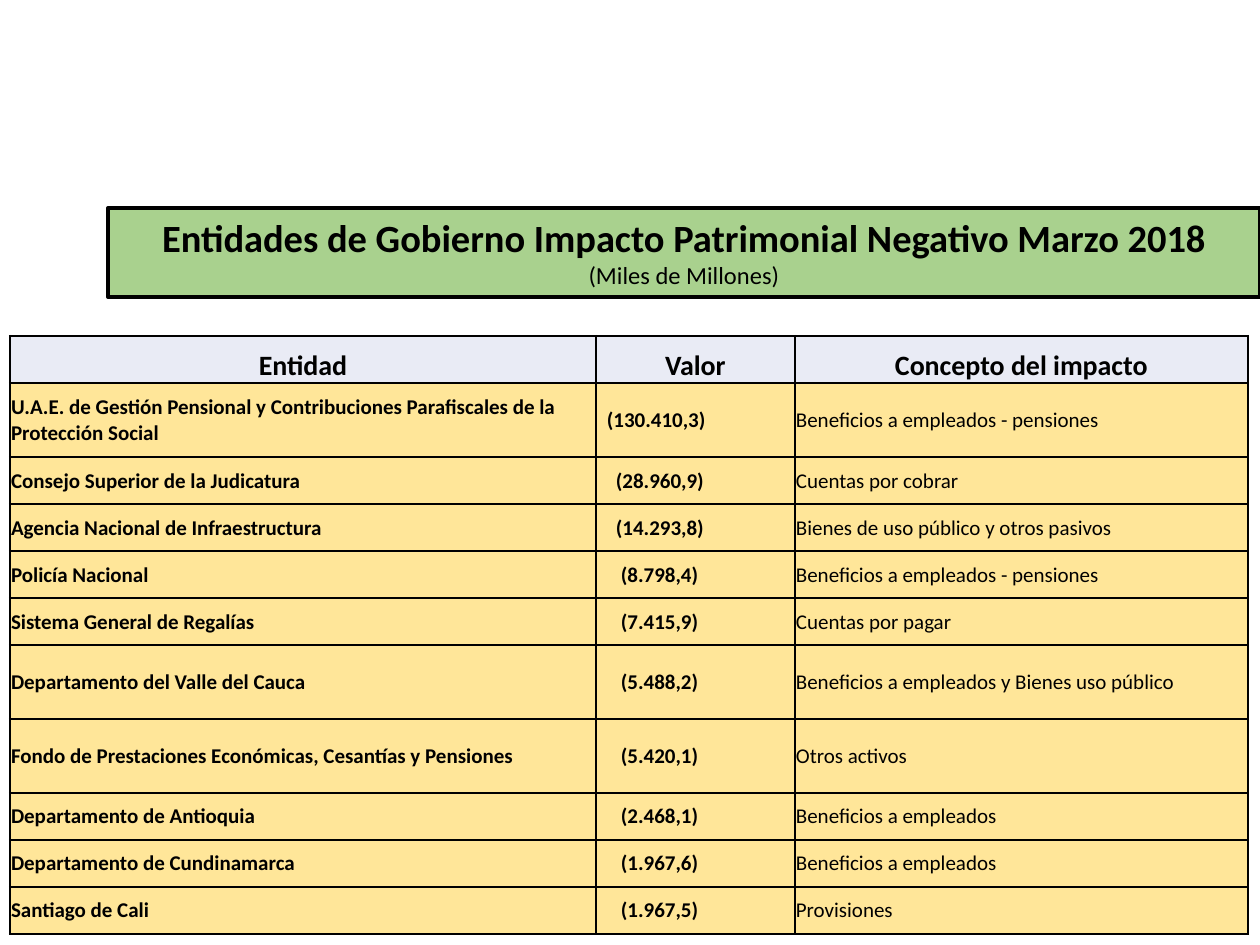
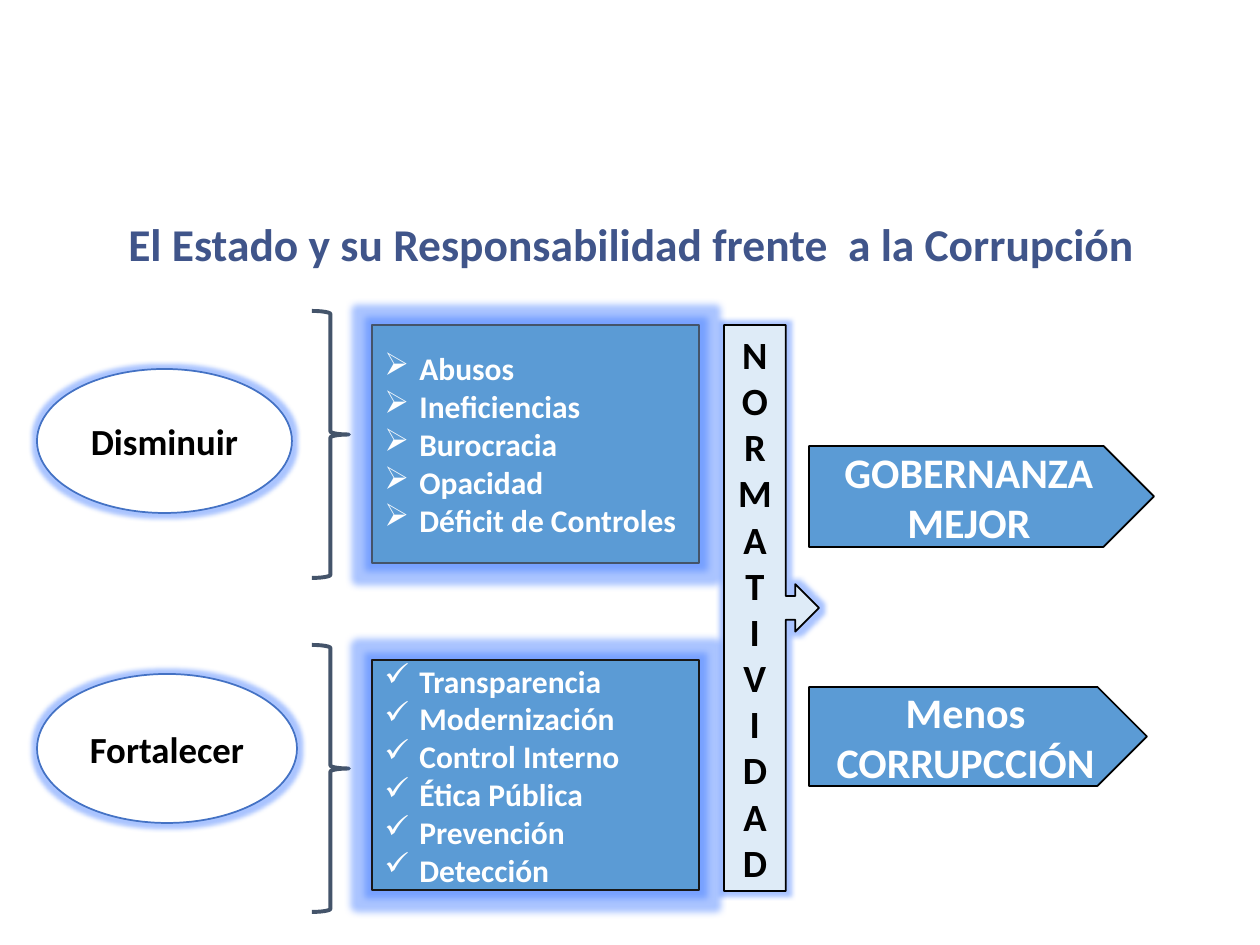
from lxml.etree import SubElement as Sub
from pptx import Presentation
from pptx.dml.color import RGBColor as Rgb
from pptx.enum.shapes import MSO_SHAPE as Kind
from pptx.enum.text import MSO_ANCHOR as Anchor, MSO_AUTO_SIZE as Auto, PP_ALIGN as Align
from pptx.oxml.ns import qn
from pptx.util import Emu, Pt

PX = Emu(7257)
BLACK = Rgb(0, 0, 0)
WHITE = Rgb(255, 255, 255)
GREEN = Rgb(0xA9, 0xD1, 0x8E)
PALE = Rgb(0xE9, 0xEB, 0xF5)
SAND = Rgb(0xFF, 0xE6, 0x99)
NAVY = Rgb(0x40, 0x55, 0x8A)
BLUE = Rgb(0x5B, 0x9B, 0xD5)
EDGE = Rgb(0x44, 0x72, 0xC4)
SLATE = Rgb(0x44, 0x54, 0x6A)
INK = Rgb(0x18, 0x17, 0x17)
ICE = Rgb(0xDE, 0xEB, 0xF7)
GLOW = Rgb(0x2B, 0x6C, 0xFF)


def write(frame, lines, sizes, color, bold=True, align=Align.CENTER, mark=None):
    for i, line in enumerate(lines):
        para = frame.paragraphs[0] if i == 0 else frame.add_paragraph()
        para.alignment = align
        if mark:
            props = para._p.get_or_add_pPr()
            props.set("marL", str(35 * PX))
            props.set("indent", str(-35 * PX))
            Sub(props, qn("a:buChar")).set("char", mark)
        run = para.add_run()
        run.text = line
        size = sizes[min(i, len(sizes) - 1)]
        form = {"name": "Calibri", "size": Pt(size), "bold": bold and not line.startswith("(Miles")}
        for key, val in form.items():
            setattr(run.font, key, val)
        run.font.color.rgb = color


def head(slide, box, lines, sizes, color):
    title = slide.shapes.title
    for key, val in zip(("left", "top", "width", "height"), box):
        setattr(title, key, val * PX)
    form = {"word_wrap": True, "auto_size": Auto.NONE, "vertical_anchor": Anchor.TOP}
    for key, val in form.items():
        setattr(title.text_frame, key, val)
    write(title.text_frame, lines, sizes, color)
    return title


deck = Presentation()
deck.slide_width = Emu(9144000)
deck.slide_height = Emu(6858000)
plain = deck.slide_layouts[5]

slide = deck.slides.add_slide(plain)
band = head(slide, (108, 208, 1152, 89),
            ["Entidades de Gobierno Impacto Patrimonial Negativo Marzo 2018", "(Miles de Millones)"],
            (22, 14), BLACK)
band.fill.solid()
band.fill.fore_color.rgb = GREEN
band.line.color.rgb = BLACK
band.line.width = Pt(2.25)

rows = [
    ("Entidad", "Valor", "Concepto del impacto"),
    ("U.A.E. de Gestión Pensional y Contribuciones Parafiscales de la Protección Social",
     "(130.410,3)", "Beneficios a empleados - pensiones"),
    ("Consejo Superior de la Judicatura", "(28.960,9)", "Cuentas por cobrar"),
    ("Agencia Nacional de Infraestructura", "(14.293,8)", "Bienes de uso público y otros pasivos"),
    ("Policía Nacional", "(8.798,4)", "Beneficios a empleados - pensiones"),
    ("Sistema General de Regalías", "(7.415,9)", "Cuentas por pagar"),
    ("Departamento del Valle del Cauca", "(5.488,2)", "Beneficios a empleados y Bienes uso público"),
    ("Fondo de Prestaciones Económicas, Cesantías y Pensiones", "(5.420,1)", "Otros activos"),
    ("Departamento de Antioquia", "(2.468,1)", "Beneficios a empleados"),
    ("Departamento de Cundinamarca", "(1.967,6)", "Beneficios a empleados"),
    ("Santiago de Cali", "(1.967,5)", "Provisiones"),
]
tall = (1, 6, 7)
pads = {11: 11, 10: 20, 9: 25}
grid = slide.shapes.add_table(len(rows), 3, 10 * PX, 336 * PX, 1238 * PX, 598 * PX).table
for col, wide in zip(grid.columns, (586, 199, 453)):
    col.width = wide * PX
for r, row in enumerate(rows):
    grid.rows[r].height = (74 if r in tall else 47) * PX
    for c, text in enumerate(row):
        cell = grid.cell(r, c)
        pad = pads[len(text)] if r and c == 1 else 1
        form = {"margin_left": pad * PX, "margin_right": PX, "margin_top": PX, "margin_bottom": 0,
                "vertical_anchor": Anchor.MIDDLE if r else Anchor.BOTTOM}
        for key, val in form.items():
            setattr(cell, key, val)
        write(cell.text_frame, [text], (12 if r else 16,), BLACK, r == 0 or c < 2,
              Align.LEFT if r else Align.CENTER)
        props = cell._tc.get_or_add_tcPr()
        for side in ("lnL", "lnR", "lnT", "lnB"):
            rule = Sub(props, qn("a:" + side), w=str(Pt(1.5)))
            Sub(Sub(rule, qn("a:solidFill")), qn("a:srgbClr"), val=str(BLACK))
        cell.fill.solid()
        cell.fill.fore_color.rgb = SAND if r else PALE

slide = deck.slides.add_slide(plain)
head(slide, (44, 210, 1176, 68), ["El Estado y su Responsabilidad frente  a la Corrupción"], (26,), NAVY)

for top in (311, 645):
    brace = slide.shapes.add_shape(Kind.RIGHT_BRACE, 312 * PX, top * PX, 37 * PX, 267 * PX)
    brace.shadow.inherit = False
    brace.adjustments[0] = 0.083
    brace.adjustments[1] = 0.463
    brace.fill.background()
    brace.line.color.rgb = SLATE
    brace.line.width = Pt(2.25)

good = ["Transparencia", "Modernización", "Control Interno", "Ética Pública", "Prevención", "Detección"]
bad = ["Abusos", "Ineficiencias", "Burocracia", "Opacidad", "Déficit de Controles"]
parts = [
    (Kind.OVAL, (37, 369, 255, 144), WHITE, EDGE, 5, ["Disminuir"], 21, BLACK, None),
    (Kind.OVAL, (37, 674, 260, 149), WHITE, EDGE, 5, ["Fortalecer"], 21, BLACK, None),
    (Kind.RECTANGLE, (372, 660, 327, 230), BLUE, INK, 8, good, 18, WHITE, "✓"),
    (Kind.RECTANGLE, (372, 325, 327, 238), BLUE, SLATE, 8, bad, 18, WHITE, "➢"),
    (Kind.RIGHT_ARROW_CALLOUT, (724, 325, 95, 566), ICE, BLACK, 5, list("NORMATIVIDAD"), 22, BLACK, None),
    (Kind.PENTAGON, (809, 446, 345, 101), BLUE, BLACK, 0, ["GOBERNANZA", "MEJOR"], 24, WHITE, None),
    (Kind.PENTAGON, (809, 687, 338, 99), BLUE, BLACK, 0, ["Menos", "CORRUPCCIÓN"], 24, WHITE, None),
]
for kind, box, fill, edge, glow, lines, size, color, mark in parts:
    part = slide.shapes.add_shape(kind, *[n * PX for n in box])
    part.fill.solid()
    part.fill.fore_color.rgb = fill
    part.line.color.rgb = edge
    part.line.width = Pt(1)
    part.shadow.inherit = False
    if glow:
        halo = Sub(part._element.spPr.find(qn("a:effectLst")), qn("a:glow"), rad=str(Pt(glow)))
        tint = Sub(halo, qn("a:srgbClr"), val=str(GLOW))
        Sub(tint, qn("a:alpha"), val="40000")
    part.text_frame.word_wrap = True
    part.text_frame.vertical_anchor = Anchor.MIDDLE
    write(part.text_frame, lines, (size,), color, True, Align.LEFT if mark else Align.CENTER, mark)

deck.save("out.pptx")
